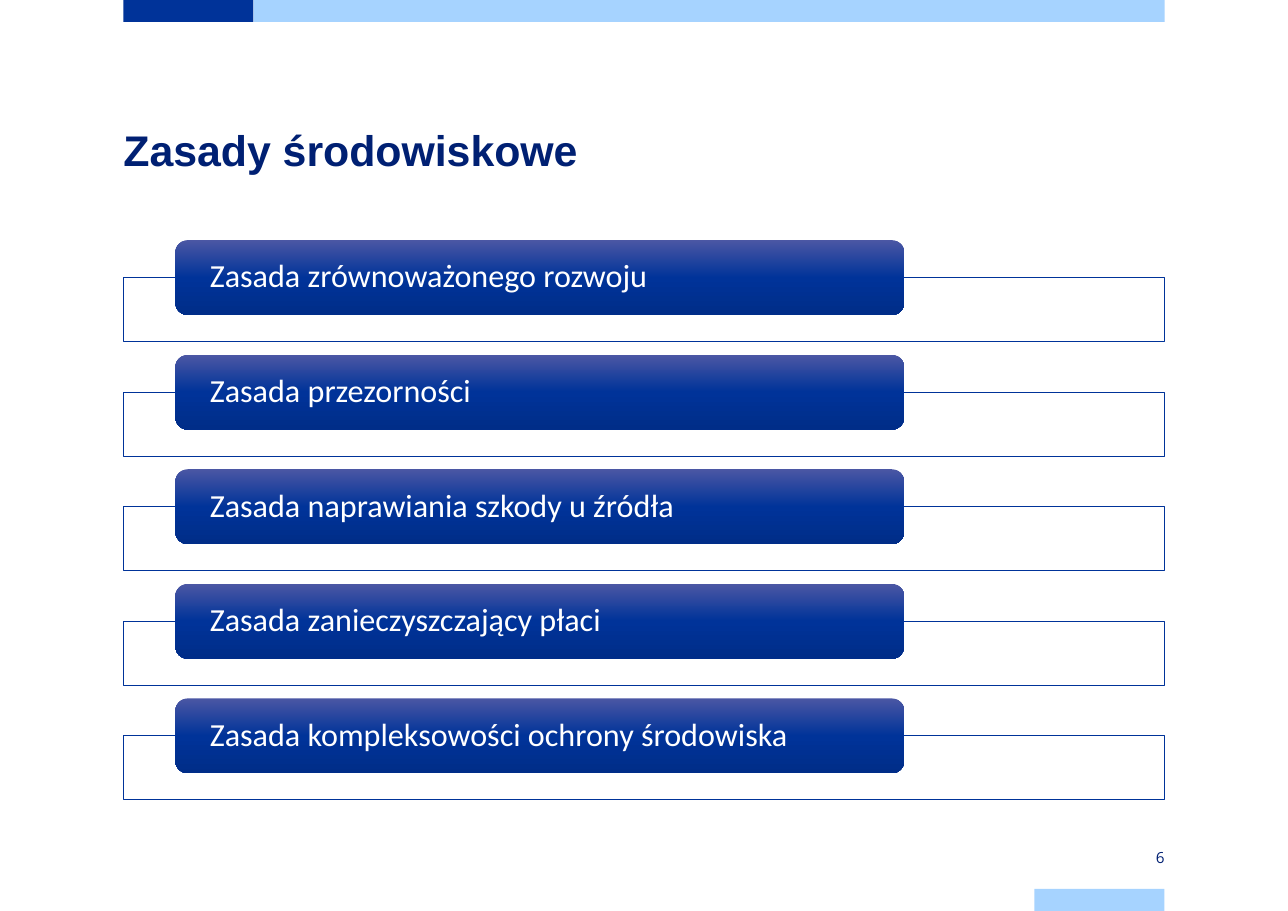
from copy import deepcopy
from pptx import Presentation
from pptx.dml.color import RGBColor
from pptx.enum.shapes import MSO_SHAPE
from pptx.enum.text import MSO_ANCHOR, PP_ALIGN
from pptx.oxml.ns import qn
from pptx.util import Inches, Pt
from lxml.etree import SubElement

WIDE, HIGH = 11.69, 8.27
LEFT, COL = 1.12, 9.45 / 8
TOP, ROW = 2.18, 1.04
NAVY, BLUE, SKY, WHITE = "002073", "003399", "A6D3FF", "FFFFFF"
SHADES = [(0, "4B57A4"), (0.5, BLUE), (1, "002D88")]
RULES = [
    "Zasada zrównoważonego rozwoju",
    "Zasada przezorności",
    "Zasada naprawiania szkody u źródła",
    "Zasada zanieczyszczający płaci",
    "Zasada kompleksowości ochrony środowiska",
]


def tint(code):
    return RGBColor.from_string(code)


class Deck:
    def __init__(self):
        self.show = Presentation()
        self.show.slide_width = Inches(WIDE)
        self.show.slide_height = Inches(HIGH)
        self.slide = self.show.slides.add_slide(self.show.slide_layouts[5])

    def place(self, col, top, cols, high):
        return [Inches(n) for n in (LEFT + col * COL, top, cols * COL, high)]

    def letter(self, shape, text, size, font, color, inset=0, pad=0,
               align=PP_ALIGN.LEFT, anchor=MSO_ANCHOR.MIDDLE, lead=1.0, bold=False):
        frame = shape.text_frame
        frame.word_wrap = True
        frame.vertical_anchor = anchor
        frame.margin_left = frame.margin_right = Inches(inset)
        frame.margin_top = frame.margin_bottom = Inches(pad)
        frame.text = text
        line = frame.paragraphs[0]
        line.alignment = align
        line.line_spacing = lead
        line.font.name = font
        line.font.size = Pt(size)
        line.font.bold = bold
        line.font.color.rgb = tint(color)

    def title(self, text):
        shape = self.slide.shapes.title
        shape.left, shape.top, shape.width, shape.height = self.place(0, 0.98, 8, 1.18)
        self.letter(shape, text, 28, "Arial", NAVY, anchor=MSO_ANCHOR.TOP, lead=1.3, bold=True)

    def shape(self, kind, *spot):
        shape = self.slide.shapes.add_shape(kind, *self.place(*spot))
        shape.shadow.inherit = False
        shape.line.fill.background()
        return shape

    def band(self, color, *spot):
        shape = self.shape(MSO_SHAPE.RECTANGLE, *spot)
        shape.fill.solid()
        shape.fill.fore_color.rgb = tint(color)
        return shape

    def frame(self, top):
        shape = self.band(WHITE, 0, top, 8, 0.58)
        fill = shape.element.spPr.find(qn("a:solidFill"))
        SubElement(fill[0], qn("a:alpha"), val="90000")
        shape.line.color.rgb = tint(BLUE)
        shape.line.width = Pt(0.5)

    def label(self, text, top):
        shape = self.shape(MSO_SHAPE.ROUNDED_RECTANGLE, 0.4, top, 5.6, 0.68)
        shape.fill.gradient()
        shape.fill.gradient_angle = 270
        stops = shape.element.spPr.find(qn("a:gradFill")).find(qn("a:gsLst"))
        stops.append(deepcopy(stops[0]))
        for stop, (spot, color) in zip(shape.fill.gradient_stops, SHADES):
            stop.position = spot
            stop.color.rgb = tint(color)
        self.letter(shape, text, 21, "Calibri", WHITE, inset=0.28, lead=0.9)

    def number(self, text):
        shape = self.slide.shapes.add_textbox(*self.place(7, 7.68, 1, 0.2))
        self.letter(shape, text, 10, "Open Sans", NAVY, pad=0.08, align=PP_ALIGN.RIGHT)


def main():
    deck = Deck()
    deck.band(BLUE, 0, 0, 1, 0.2)
    deck.band(SKY, 1, 0, 7, 0.2)
    deck.band(SKY, 7, HIGH - 0.2, 1, 0.2)
    deck.title("Zasady środowiskowe")
    for step, rule in enumerate(RULES):
        top = TOP + step * ROW
        deck.frame(top + 0.34)
        deck.label(rule, top)
    deck.number("6")
    deck.show.save("out.pptx")


if __name__ == "__main__":
    main()
